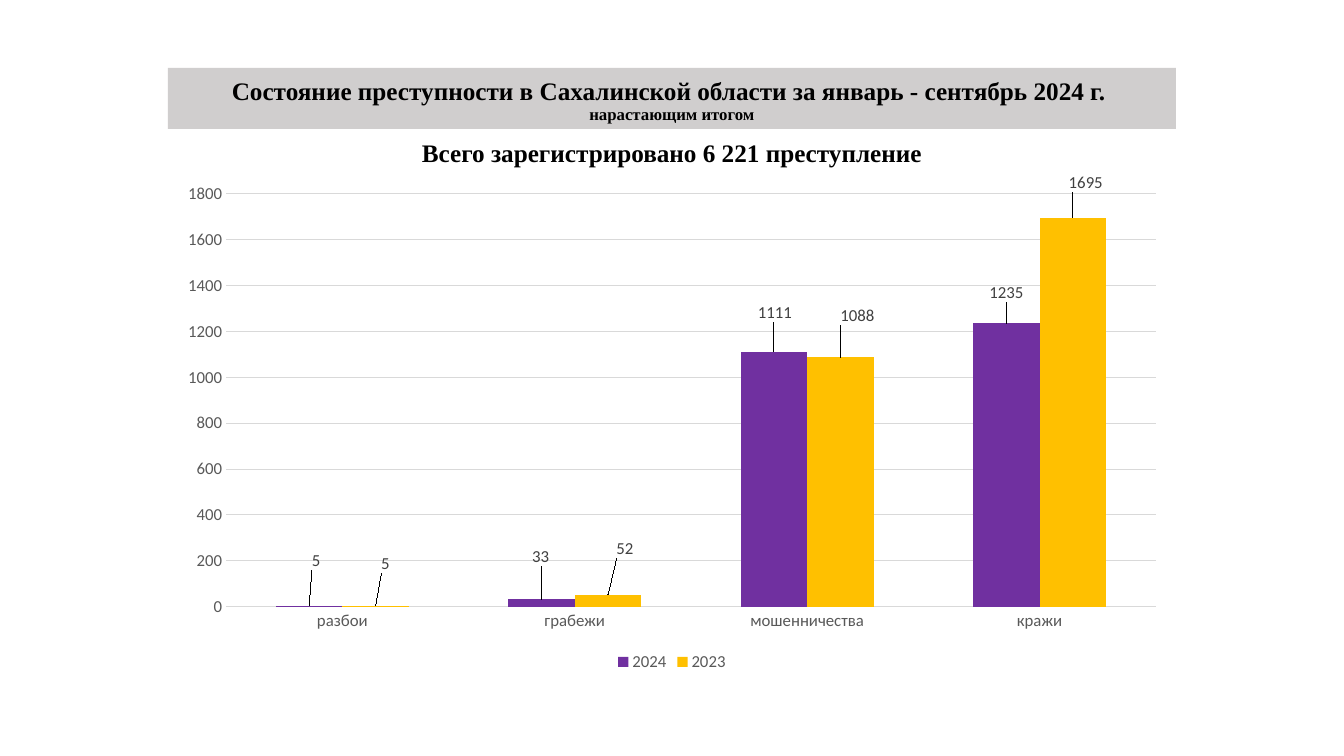
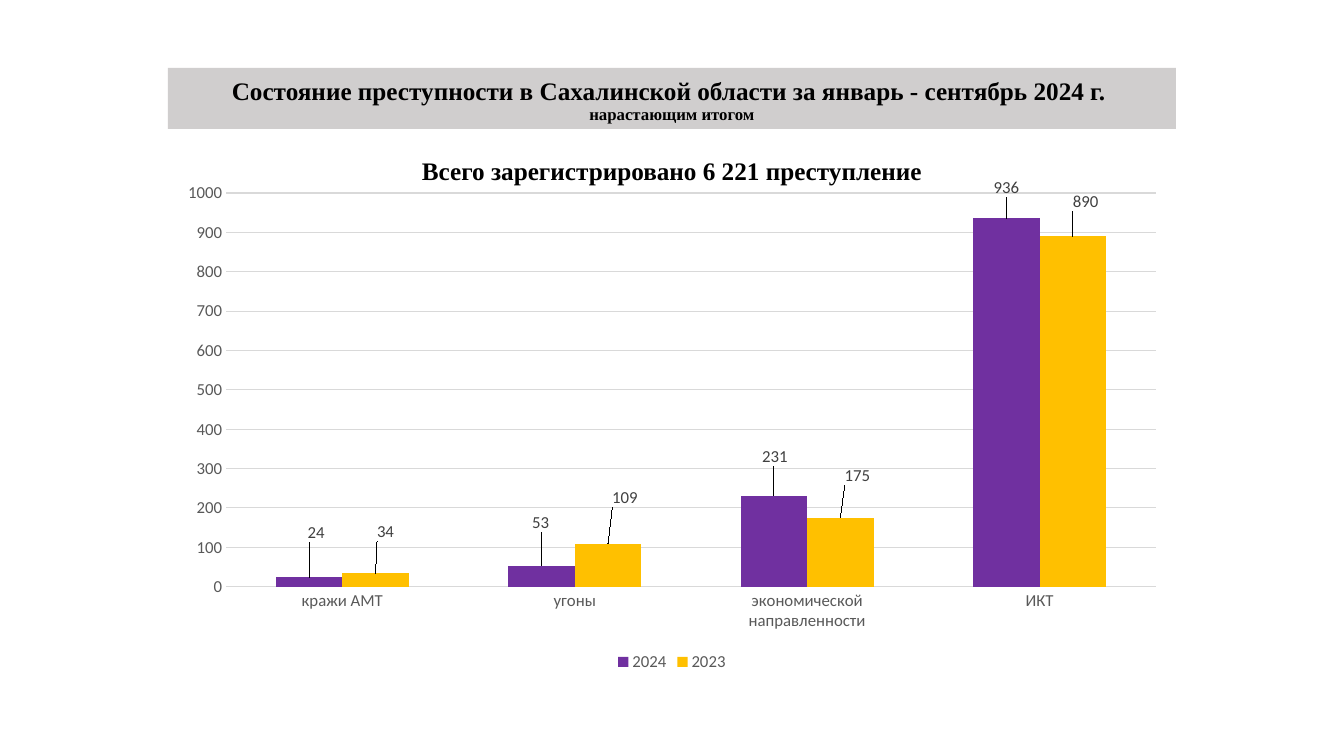
from lxml import etree
from pptx import Presentation
from pptx.chart.data import CategoryChartData
from pptx.dml.color import RGBColor
from pptx.enum.chart import (XL_CHART_TYPE, XL_LABEL_POSITION,
                             XL_LEGEND_POSITION, XL_TICK_MARK)
from pptx.enum.shapes import MSO_SHAPE
from pptx.enum.text import MSO_ANCHOR, PP_ALIGN
from pptx.oxml.ns import qn
from pptx.util import Emu, Pt

COLUMNS = XL_CHART_TYPE.COLUMN_CLUSTERED
OUTSIDE = XL_LABEL_POSITION.OUTSIDE_END
BOTTOM = XL_LEGEND_POSITION.BOTTOM
NO_TICK = XL_TICK_MARK.NONE
RECT = MSO_SHAPE.RECTANGLE
ANCHOR_BOTTOM = MSO_ANCHOR.BOTTOM
CENTER = PP_ALIGN.CENTER

EMU_PER_PX = 914400 / 100.8
LEFT, WIDTH = 168, 1008
CHART_TOP, CHART_H = 173, 503

TITLE = "Состояние преступности в Сахалинской области за январь - сентябрь 2024 г. "
PERIOD = "нарастающим итогом"
TOTAL = "Всего зарегистрировано 6 221 преступление"

# Shift of each value label from its usual place above the column, in px
LABEL_SHIFTS = {
    "2024": [(7, -31), (-1, -29), (1, -25), (0, -17)],
    "2023": [(10, -28), (17, -32), (17, -28), (13, -21)],
}


def px(n):
    return Emu(round(n * EMU_PER_PX))


def rgb(value):
    return RGBColor.from_string(value)


class Deck:
    HEAD_FONT, CHART_FONT = "Times New Roman", "Calibri"
    INK, BAND, GRID = "000000", "D0CECE", "D9D9D9"
    AXIS_INK, LABEL_INK = "595959", "404040"
    SERIES = {"2024": "7030A0", "2023": "FFC000"}

    def __init__(self):
        self.prs = Presentation()
        self.prs.slide_width, self.prs.slide_height = px(1344), px(756)
        self.s = None

    def new_slide(self):
        self.s = self.prs.slides.add_slide(self.prs.slide_layouts[6])

    def font(self, font, name, size, color, bold=False):
        font.name, font.size, font.bold = name, Pt(size), bold
        font.color.rgb = rgb(color)

    def heading(self, p, sizes, spacing):
        p.alignment, p.line_spacing = CENTER, spacing
        for r, size in zip(p.runs, sizes):
            self.font(r.font, self.HEAD_FONT, size, self.INK, True)

    def title_band(self):
        sp = self.s.shapes.add_shape(RECT, px(LEFT), px(68), px(WIDTH), px(61))
        sp.shadow.inherit = False
        sp.fill.solid()
        sp.fill.fore_color.rgb = rgb(self.BAND)
        sp.line.fill.background()
        tf = sp.text_frame
        tf.vertical_anchor = ANCHOR_BOTTOM
        tf.text = f"{TITLE}\v{PERIOD}"
        self.heading(tf.paragraphs[0], (18, 12), 0.9)

    def subtitle(self, top):
        tf = self.s.shapes.add_textbox(
            px(LEFT), px(top), px(WIDTH), px(36)).text_frame
        tf.word_wrap = True
        tf.text = TOTAL
        p = tf.paragraphs[0]
        p.space_before = Pt(10)
        self.heading(p, (18,), 0.8)

    def column_chart(self, categories, values):
        data = CategoryChartData()
        data.categories = categories
        for name in self.SERIES:
            data.add_series(name, values[name])
        chart = self.s.shapes.add_chart(
            COLUMNS, px(LEFT), px(CHART_TOP), px(WIDTH), px(CHART_H), data).chart
        chart.has_title = False
        self.font(chart.font, self.CHART_FONT, 10, self.INK)

        # Axes and legend
        for axis in (chart.category_axis, chart.value_axis):
            axis.major_tick_mark = axis.minor_tick_mark = NO_TICK
            axis.format.line.fill.background()
            self.font(axis.tick_labels.font, self.CHART_FONT, 12, self.AXIS_INK)
        grid = chart.value_axis.major_gridlines.format.line
        grid.color.rgb, grid.width = rgb(self.GRID), Pt(0.75)
        chart.has_legend = True
        chart.legend.position = BOTTOM
        chart.legend.include_in_layout = False
        self.font(chart.legend.font, self.CHART_FONT, 12, self.AXIS_INK)

        # Columns
        plot = chart.plots[0]
        plot.vary_by_categories = False
        plot.gap_width, plot.overlap = 150, 0
        for series in plot.series:
            series.format.fill.solid()
            series.format.fill.fore_color.rgb = rgb(self.SERIES[series.name])
            self.value_labels(series)

    def value_labels(self, series):
        series.data_labels.show_value = True
        self.font(series.data_labels.font, self.CHART_FONT, 12, self.LABEL_INK)
        shifts = LABEL_SHIFTS[series.name]
        for i in range(len(shifts)):
            label = series.points[i].data_label
            self.font(label.font, self.CHART_FONT, 12, self.LABEL_INK)
            label.position = OUTSIDE
        # Manual layout: the shift as a share of the chart size
        labels = series._element.findall(f"{qn('c:dLbls')}/{qn('c:dLbl')}")
        for element, (dx, dy) in zip(labels, shifts):
            layout = etree.Element(qn("c:layout"))
            manual = etree.SubElement(layout, qn("c:manualLayout"))
            for tag, share in (("c:x", dx / WIDTH), ("c:y", dy / CHART_H)):
                etree.SubElement(manual, qn(tag)).set("val", f"{share:.4f}")
            element.insert(1, layout)


def main():
    slides = [
        (138, ["разбои", "грабежи", "мошенничества", "кражи"],
         {"2024": [5, 33, 1111, 1235], "2023": [5, 52, 1088, 1695]}),
        (156, ["кражи АМТ", "угоны", "экономической направленности", "ИКТ"],
         {"2024": [24, 53, 231, 936], "2023": [34, 109, 175, 890]}),
    ]
    deck = Deck()
    for subtitle_top, categories, values in slides:
        deck.new_slide()
        deck.title_band()
        deck.subtitle(subtitle_top)
        deck.column_chart(categories, values)
    deck.prs.save("out.pptx")


if __name__ == "__main__":
    main()
